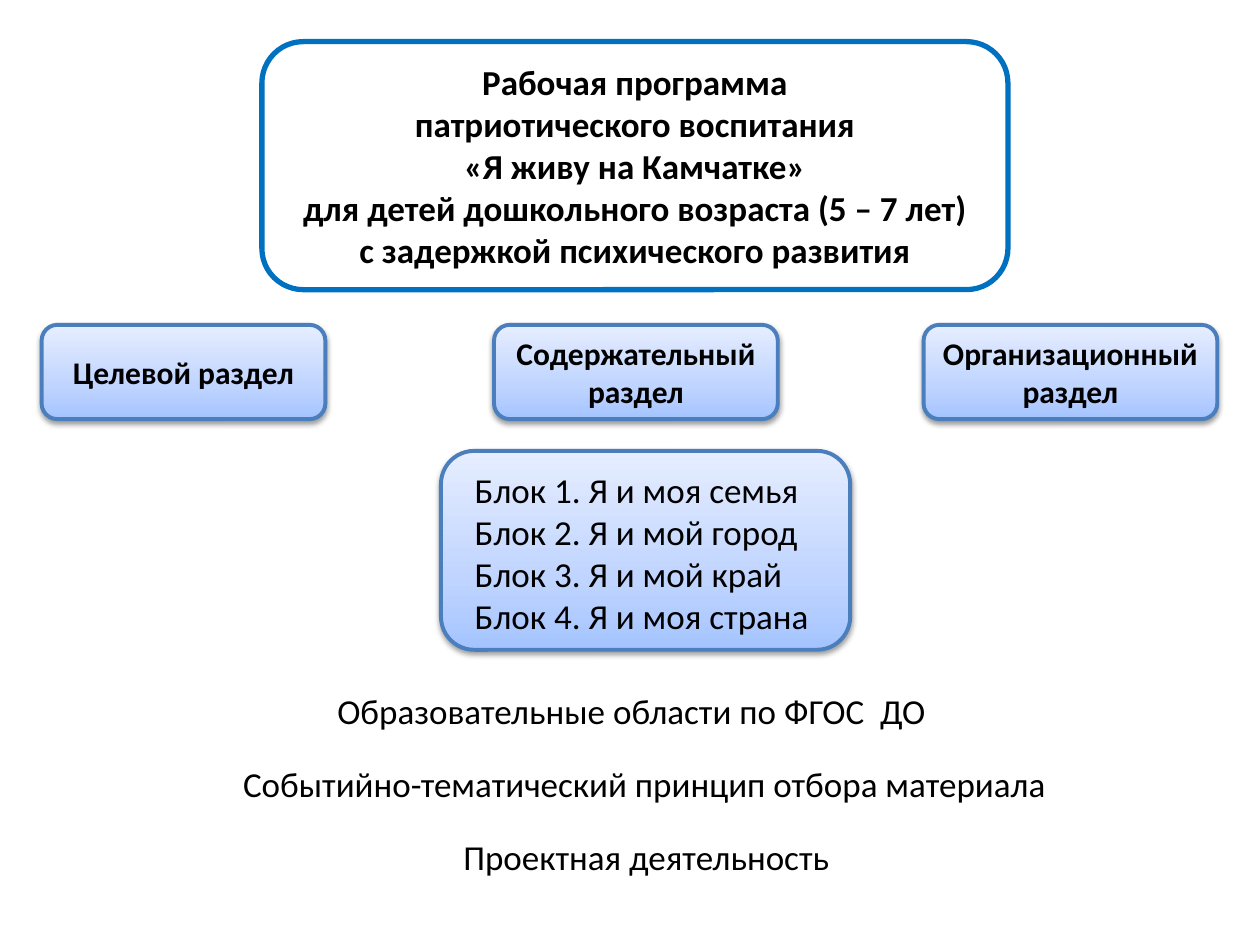
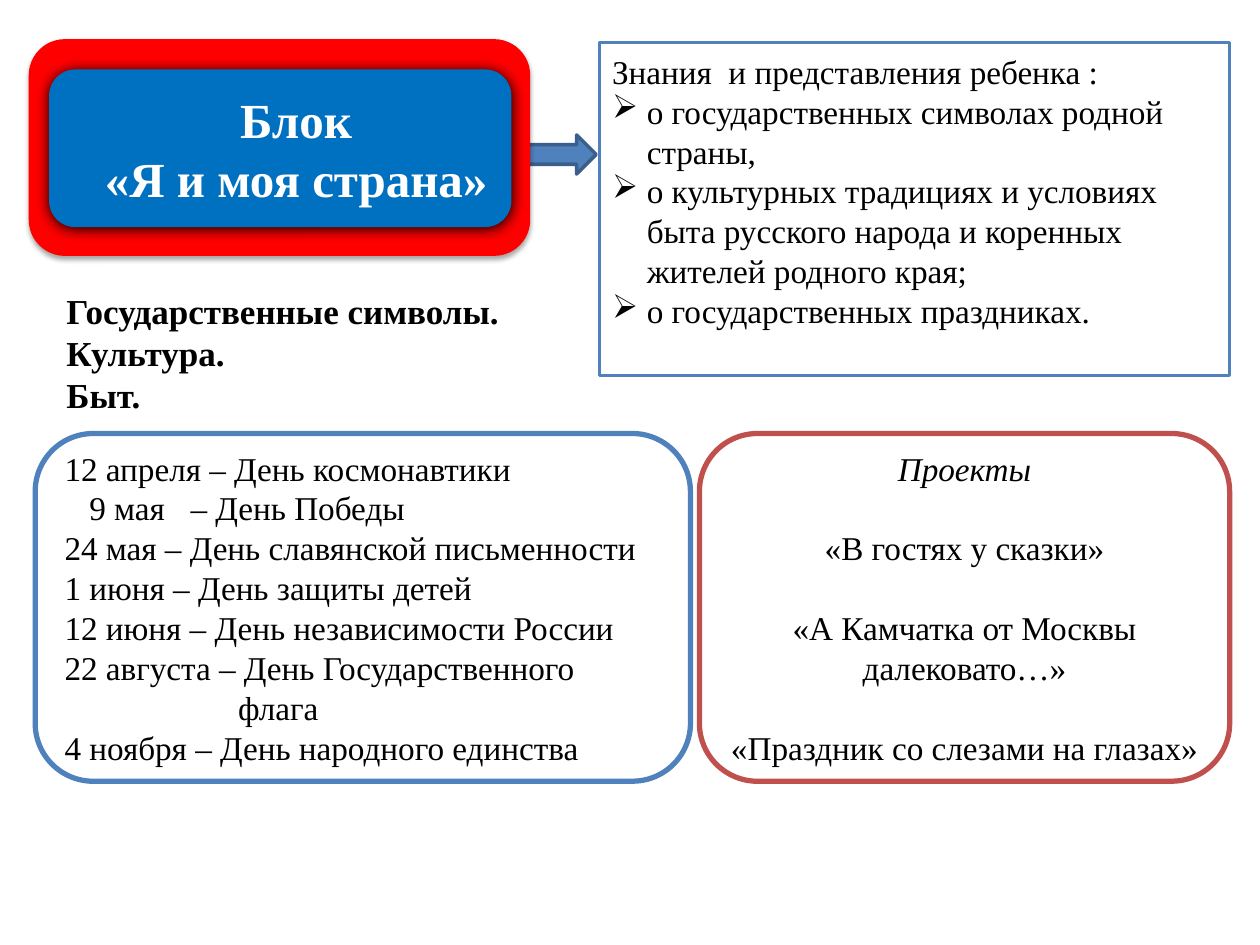
from lxml import etree
from pptx import Presentation
from pptx import util as u
from pptx.dml.color import RGBColor
from pptx.enum import shapes, text
from pptx.oxml.ns import qn

rgb = RGBColor.from_string
Cm, Pt = u.Cm, u.Pt
Kind, Align, Anchor = shapes.MSO_SHAPE, text.PP_ALIGN, text.MSO_ANCHOR

SANS, SERIF = "Calibri", "Times New Roman"
BLACK, WHITE, RED = "000000", "FFFFFF", "FF0000"
BLUE, STEEL, BRICK = "0070C0", "4F81BD", "C0504D"
EDGE, NAVY = "4B7EBC", "3A5F8C"
SKY = [(0, "A4C4FF"), (35, "BFD4FF"), (100, "E6EEFF")]
SOFT = (38, 3.1, 1.6)


def draw(slide, kind, at, fill, line=None, width=0, shade=None):
    shape = slide.shapes.add_shape(kind, *map(Cm, at))
    shape.shadow.inherit = False
    if fill == SKY:
        shape.fill.gradient()
        shape.fill.gradient_angle = 90
        stops = shape._element.spPr.find(".//" + qn("a:gsLst"))
        del stops[:]
        for pos, tone in fill:
            stop = etree.SubElement(stops, qn("a:gs"), pos=str(pos * 1000))
            etree.SubElement(stop, qn("a:srgbClr"), val=tone)
    else:
        shape.fill.solid()
        shape.fill.fore_color.rgb = rgb(fill)
    if line:
        shape.line.color.rgb = rgb(line)
        shape.line.width = Pt(width)
    else:
        shape.line.fill.background()
    if shade:
        alpha, blur, dist = shade
        glow = etree.SubElement(
            shape._element.spPr.find(qn("a:effectLst")), qn("a:outerShdw"),
            blurRad=str(Pt(blur)), dist=str(Pt(dist)), dir="5400000",
            algn="ctr", rotWithShape="0")
        tone = etree.SubElement(glow, qn("a:srgbClr"), val=BLACK)
        etree.SubElement(tone, qn("a:alpha"), val=str(alpha * 1000))
    return shape


def write(shape, lines, size, font, bold=False, color=BLACK,
          align=Align.LEFT, anchor=Anchor.MIDDLE, wrap=True):
    frame = shape.text_frame
    frame.text = "\n".join(lines)
    frame.auto_size = text.MSO_AUTO_SIZE.NONE
    frame.word_wrap = wrap
    frame.vertical_anchor = anchor
    for par in frame.paragraphs:
        par.alignment = align
        for run in par.runs:
            run.font.size = Pt(size)
            run.font.name = font
            run.font.bold = bold
            run.font.color.rgb = rgb(color)
    return frame.paragraphs


deck = Presentation()
deck.slide_width, deck.slide_height = Cm(25.4), Cm(19.05)
plan, land = [deck.slides.add_slide(deck.slide_layouts[5]) for _ in range(2)]

head = (5.28, 0.84, 15.04, 5)
draw(plan, Kind.ROUNDED_RECTANGLE, head, WHITE, BLUE, 3)

parts = [
    (0.84, 5.72, "Целевой раздел"),
    (9.96, 5.72, "Содержательный раздел"),
    (18.62, 5.92, "Организационный раздел"),
]
for left, wide, name in parts:
    part = draw(plan, Kind.ROUNDED_RECTANGLE, (left, 6.55, wide, 1.9),
                SKY, EDGE, 2.25, SOFT)
    write(part, [name], 18, SANS, True, align=Align.CENTER)

draw(plan, Kind.ROUNDED_RECTANGLE, (8.89, 9.09, 8.25, 4.01),
     SKY, EDGE, 2.25, SOFT)
themes = ["моя семья", "мой город", "мой край", "моя страна"]
blocks = [f"Блок {num}. Я и {name}" for num, name in enumerate(themes, 1)]
notes = [
    ((9.32, 9.32, 7.29, 3.68), blocks),
    ((6.55, 13.77, 12.47, 1.12), ["Образовательные области по ФГОС  ДО"]),
    ((4.65, 15.24, 16.84, 1.12),
     ["Событийно-тематический принцип отбора материала"]),
    ((9.09, 16.71, 8.13, 1.12), ["Проектная деятельность"]),
]
for at, lines in notes:
    note = plan.shapes.add_textbox(*map(Cm, at))
    write(note, lines, 20, SANS, anchor=Anchor.TOP, wrap=False)

draw(land, Kind.RIGHT_ARROW, (9.3, 2.72, 2.72, 0.79), STEEL, NAVY, 2)
draw(land, Kind.ROUNDED_RECTANGLE, (0.58, 0.79, 10.11, 4.37), RED,
     shade=(35, 3.1, 1.8))
badge = (0.99, 1.4, 9.32, 3.18)
draw(land, Kind.ROUNDED_RECTANGLE, badge, BLUE, shade=(100, 8.5, 1))

goals = draw(land, Kind.RECTANGLE, (12.09, 0.86, 12.7, 6.71),
             WHITE, STEEL, 2)
pars = write(goals, [
    "Знания  и представления ребенка :",
    "о государственных символах родной\vстраны,",
    "о культурных традициях и условиях\v"
    "быта русского народа и коренных\vжителей родного края;",
    "о государственных праздниках.",
], 19, SERIF, anchor=Anchor.TOP)
goals.text_frame.margin_top = Cm(0.17)
for par in pars[1:]:
    props = par._p.get_or_add_pPr()
    props.set("marL", str(Cm(0.7)))
    props.set("indent", str(Cm(-0.7)))
    etree.SubElement(props, qn("a:buChar"), char="➢")

topics = land.shapes.add_textbox(Cm(1.09), Cm(5.72), Cm(9.3), Cm(3.58))
write(topics, ["Государственные символы.", "Культура.", "Быт."],
      20, SERIF, True, anchor=Anchor.TOP, wrap=False)

days = draw(land, Kind.ROUNDED_RECTANGLE, (0.71, 8.74, 13.21, 7.01),
            WHITE, STEEL, 3)
pars = write(days, [
    "12 апреля – День космонавтики",
    "9 мая\t– День Победы",
    "24 мая – День славянской письменности",
    "1 июня – День защиты детей",
    "12 июня – День независимости России",
    "22 августа – День Государственного\vфлага",
    "4 ноября – День народного единства",
], 19, SERIF)
props = pars[1]._p.get_or_add_pPr()
props.set("indent", str(Cm(0.5)))
tabs = etree.SubElement(props, qn("a:tabLst"))
etree.SubElement(tabs, qn("a:tab"), pos=str(Cm(2.87)), algn="l")
props = pars[5]._p.get_or_add_pPr()
props.set("marL", str(Cm(3.5)))
props.set("indent", str(Cm(-3.5)))

works = draw(land, Kind.ROUNDED_RECTANGLE, (14.1, 8.74, 10.69, 7.01),
             WHITE, BRICK, 3)
pars = write(works, [
    "Проекты",
    "«В гостях у сказки»",
    "«А Камчатка от Москвы далековато…»",
    "«Праздник со слезами на глазах»",
], 19, SERIF, align=Align.CENTER)
pars[0].runs[0].font.italic = True
for par in pars[1:]:
    par.space_before = Pt(22.8)

titles = [
    (plan, head, 20, SANS, BLACK, 0, [
        "Рабочая программа",
        "патриотического воспитания",
        "«Я живу на Камчатке»",
        "для детей дошкольного возраста (5 – 7 лет)",
        "с задержкой психического развития",
    ]),
    (land, badge, 28, SERIF, WHITE, 0.64, ["Блок", "«Я и моя страна»"]),
]
for slide, at, size, font, color, shift, lines in titles:
    title = slide.shapes.title
    title.left, title.top, title.width, title.height = map(Cm, at)
    for par in write(title, lines, size, font, True, color, Align.CENTER):
        par._p.get_or_add_pPr().set("indent", str(Cm(shift)))
    slide.shapes._spTree.append(title._element)

deck.save("out.pptx")
